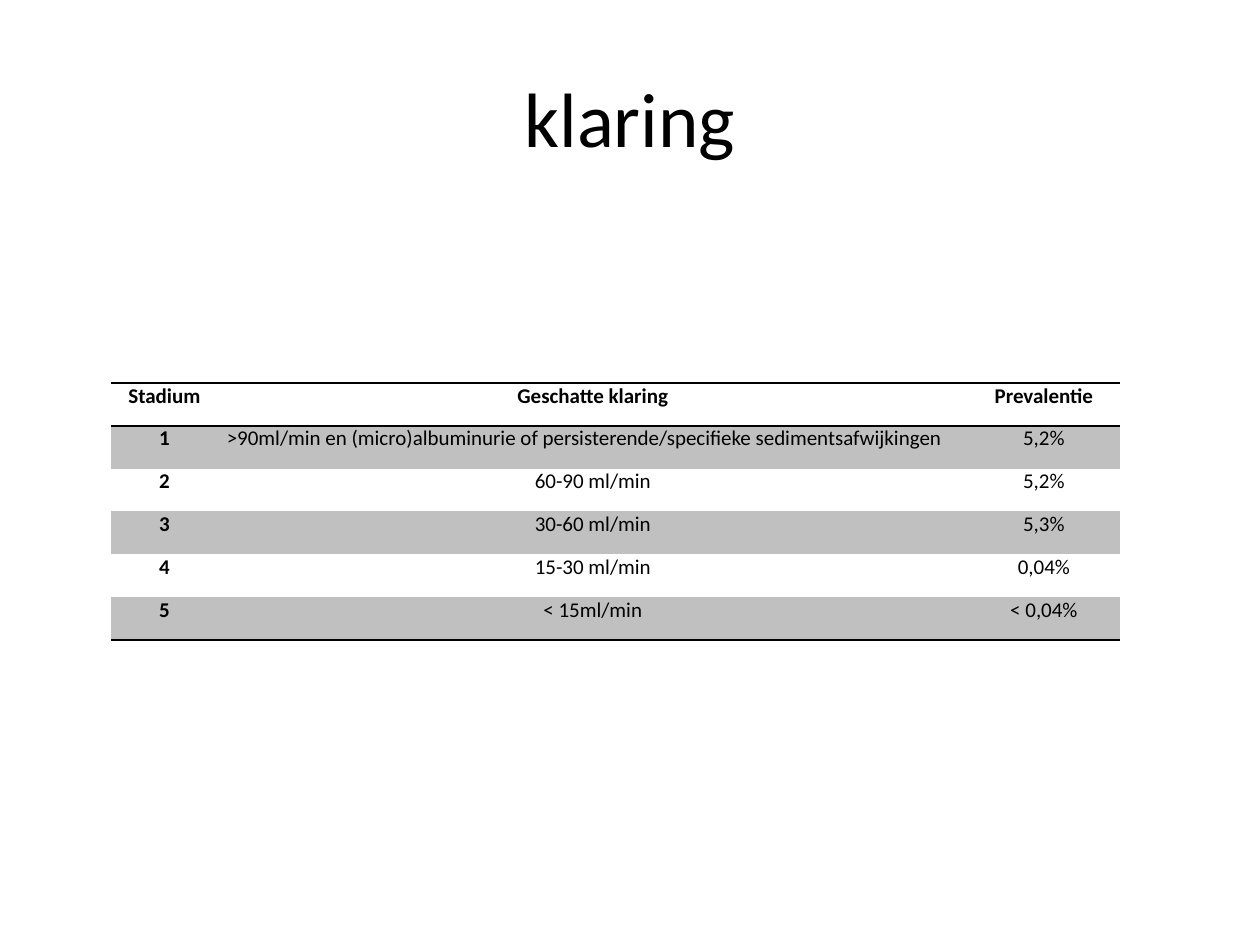
"""Build a slide tabulating kidney clearance stages and their prevalence."""
from dataclasses import dataclass

from lxml import etree
from pptx import Presentation, util as u
from pptx.dml.color import RGBColor
from pptx.enum import text
from pptx.oxml.ns import qn

SLIDE_W, SLIDE_H = u.Inches(10), u.Inches(7.5)


@dataclass(frozen=True)
class Theme:
    font: str = "Calibri"
    ink: str = "000000"
    paper: str = "FFFFFF"
    band: str = "C0C0C0"
    title_size: int = 44
    body_size: int = 12
    rule_width: int = 1


@dataclass(frozen=True)
class Area:
    """A rectangle in inches, placed on the slide."""
    left: float
    top: float
    width: float
    height: float

    def emu(self) -> tuple:
        return tuple(u.Inches(n) for n in (self.left, self.top, self.width, self.height))


@dataclass(frozen=True)
class Stage:
    stadium: str
    clearance: str
    prevalence: str
    align: text.PP_ALIGN = text.PP_ALIGN.CENTER

    def values(self) -> tuple:
        return self.stadium, self.clearance, self.prevalence


THEME = Theme()
TITLE_AREA = Area(0.5, 0.3, 9, 1.25)
TABLE_AREA = Area(0.88, 3.04, 8.01, 2.04)
COLUMN_WIDTHS = (0.85, 5.95, 1.21)
STAGES = (
    Stage("Stadium", "Geschatte klaring", "Prevalentie"),
    Stage("1", ">90ml/min en (micro)albuminurie of persisterende/specifieke sedimentsafwijkingen",
          "5,2%", text.PP_ALIGN.LEFT),
    Stage("2", "60-90 ml/min", "5,2%"),
    Stage("3", "30-60 ml/min", "5,3%"),
    Stage("4", "15-30 ml/min", "0,04%"),
    Stage("5", "< 15ml/min", "< 0,04%"),
)


def write(paragraph, words: str, size: int, bold: bool = False,
          align: text.PP_ALIGN = text.PP_ALIGN.CENTER) -> None:
    paragraph.text = words
    paragraph.alignment = align
    font = paragraph.font
    font.name, font.size, font.bold = THEME.font, u.Pt(size), bold
    font.color.rgb = RGBColor.from_string(THEME.ink)


def rule_cell(cell, ruled: str) -> None:
    properties = cell._tc.get_or_add_tcPr()
    for side in "LRTB":
        line = etree.SubElement(properties, qn(f"a:ln{side}"))
        if side in ruled:
            line.set("w", str(u.Pt(THEME.rule_width)))
            fill = etree.SubElement(line, qn("a:solidFill"))
            etree.SubElement(fill, qn("a:srgbClr"), val=THEME.ink)
        else:
            etree.SubElement(line, qn("a:noFill"))


def draw_title(slide, words: str) -> None:
    frame = slide.shapes.add_textbox(*TITLE_AREA.emu()).text_frame
    frame.word_wrap = True
    frame.vertical_anchor = text.MSO_ANCHOR.MIDDLE
    write(frame.paragraphs[0], words, THEME.title_size)


def draw_stages(slide, stages: tuple[Stage, ...]) -> None:
    table = slide.shapes.add_table(len(stages), len(COLUMN_WIDTHS), *TABLE_AREA.emu()).table
    table.first_row = table.horz_banding = False
    for column, width in zip(table.columns, COLUMN_WIDTHS):
        column.width = u.Inches(width)
    rules = {0: "TB", 1: "T", len(stages) - 1: "B"}
    for row, stage in enumerate(stages):
        for col, words in enumerate(stage.values()):
            cell = table.cell(row, col)
            cell.margin_left = cell.margin_right = u.Inches(0.07)
            cell.margin_top = cell.margin_bottom = 0
            rule_cell(cell, rules.get(row, ""))
            cell.fill.solid()
            cell.fill.fore_color.rgb = RGBColor.from_string(THEME.band if row % 2 else THEME.paper)
            align = stage.align if col == 1 else text.PP_ALIGN.CENTER
            write(cell.text_frame.paragraphs[0], words, THEME.body_size, row == 0 or col == 0, align)


def main() -> None:
    deck = Presentation()
    deck.slide_width, deck.slide_height = SLIDE_W, SLIDE_H
    slide = deck.slides.add_slide(deck.slide_layouts[6])
    draw_title(slide, "klaring")
    draw_stages(slide, STAGES)
    deck.save("out.pptx")


if __name__ == "__main__":
    main()
